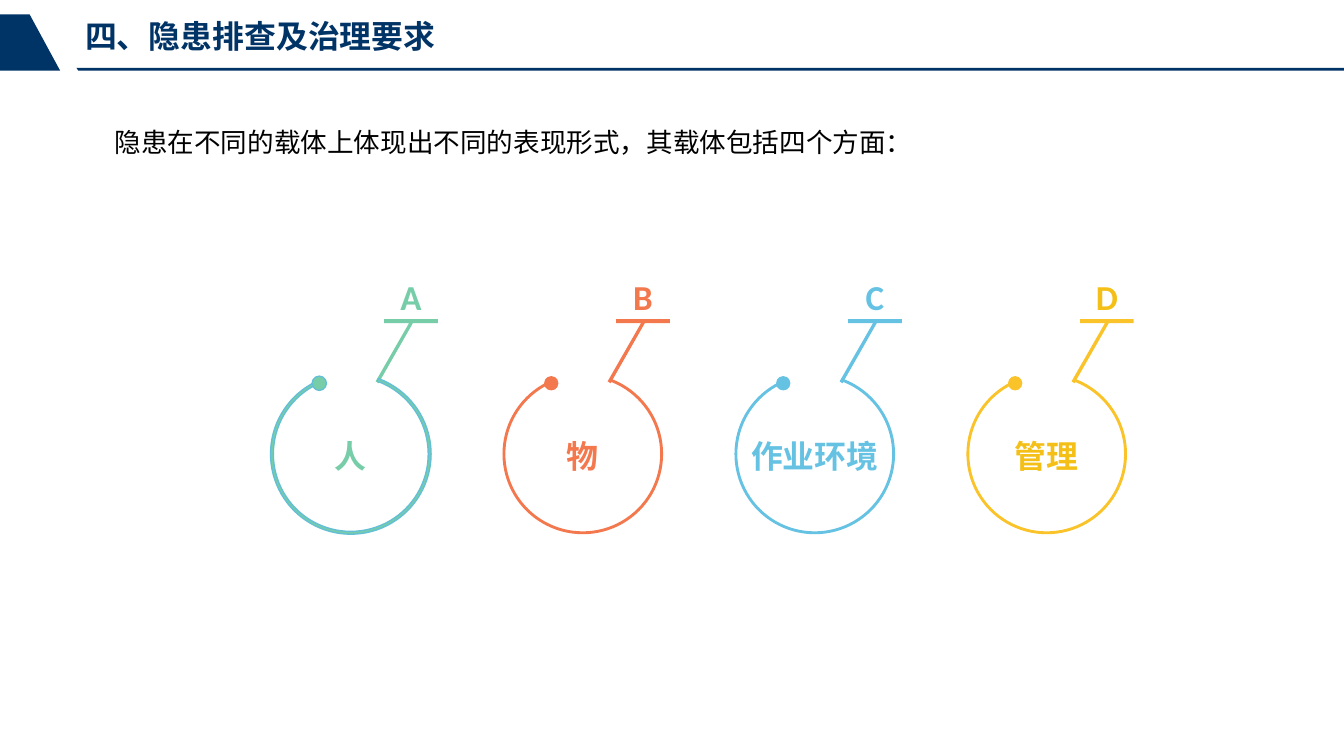
import pptx
import pptx.util
import pptx.dml.color
import pptx.enum.shapes
import pptx.enum.text
import pptx.oxml
import pptx.oxml.ns
from pptx.util import Inches

theme = {
    "navy": "003366", "black": "000000", "edge": "63BED7",
    "han": "Noto Sans CJK SC", "latin": "Arial", "mark": "Calibri",
    "head": 24, "body": 20, "name": 24, "tag": 26.4,
}
items = [
    ("A", "人", "76CDA8", "76CDA8"),
    ("B", "物", "F3784E", "F3784E"),
    ("C", "作业环境", "65C2E3", "65C2E3"),
    ("D", "管理", "F9C329", "F4C018"),
]
rgb = pptx.dml.color.RGBColor.from_string
kind = pptx.enum.shapes.MSO_SHAPE
align = pptx.enum.text.PP_ALIGN
anchor = pptx.enum.text.MSO_ANCHOR

deck = pptx.Presentation()
deck.slide_width, deck.slide_height = Inches(14.06), Inches(7.91)
slide = deck.slides.add_slide(deck.slide_layouts[6])


def paint(shape, color):
    shape.shadow.inherit = False
    shape.fill.solid()
    shape.fill.fore_color.rgb = rgb(color)
    shape.line.fill.background()


def write(area, text, face, size, color, bold=True, center=True, inset=0):
    box = slide.shapes.add_textbox(*[Inches(side) for side in area])
    frame = box.text_frame
    frame.word_wrap = True
    frame.margin_left = frame.margin_right = Inches(inset)
    frame.margin_top = frame.margin_bottom = Inches(inset / 2)
    frame.vertical_anchor = anchor.MIDDLE if center else anchor.TOP
    frame.text = text
    para = frame.paragraphs[0]
    para.alignment = align.CENTER if center else align.LEFT
    font = para.runs[0].font
    font.name, font.size, font.bold = face, pptx.util.Pt(size), bold
    font.color.rgb = rgb(color)
    east = pptx.oxml.parse_xml(
        f'<a:ea {pptx.oxml.ns.nsdecls("a")} typeface="{theme["han"]}"/>')
    para.runs[0]._r.rPr.find(pptx.oxml.ns.qn("a:latin")).addnext(east)
    return para


first, last, mid = 3.67, 10.95, 4.75
step = (last - first) / (len(items) - 1)
wide, thick, dot = 1.68, 0.03, 0.15
flag = [(0.35, 3.34), (0.91, 3.34), (0.91, 3.38), (0.65, 3.38),
        (0.29, 4.01), (0.26, 3.99), (0.61, 3.38), (0.35, 3.38)]

plates = [
    ([(0.8, 0.71), (14.06, 0.71), (14.06, 0.74), (0.82, 0.74)], theme["navy"]),
    ([(0.31, 0.15), (0.63, 0.74), (0, 0.74), (0, 0.15)], theme["navy"]),
]
for i, (tag, name, fill, ink) in enumerate(items):
    plates.append(([(first + i * step + x, y) for x, y in flag], fill))

for points, color in plates:
    ends = [(Inches(x), Inches(y)) for x, y in points]
    build = slide.shapes.build_freeform(*ends[0], scale=1.0)
    build.add_line_segments(ends[1:], close=True)
    paint(build.convert_to_shape(), color)

for i, (tag, name, fill, ink) in enumerate(items):
    left = first + i * step
    write((left + 0.35, 2.87, 0.56, 0.47), tag, theme["mark"], theme["tag"], ink)
    ring = slide.shapes.add_shape(
        kind.BLOCK_ARC, Inches(left - wide / 2), Inches(mid - wide / 2),
        Inches(wide), Inches(wide))
    for k, value in enumerate((290 * 0.6, 244 * 0.6, thick / wide)):
        ring.adjustments[k] = value
    ball = slide.shapes.add_shape(
        kind.OVAL, Inches(left - 0.33 - dot / 2), Inches(mid - 0.74 - dot / 2),
        Inches(dot), Inches(dot))
    for shape in (ring, ball):
        paint(shape, fill)
        if i == 0:
            shape.line.color.rgb = rgb(theme["edge"])
            shape.line.width = pptx.util.Pt(1)
    write((left - wide / 2, 3.94, wide, 1.65), name,
          theme["latin"], theme["name"], ink)

intro = write((1.1, 1.1, 9.43, 0.55),
              "隐患在不同的载体上体现出不同的表现形式，其载体包括四个方面：",
              theme["han"], theme["body"], theme["black"],
              bold=False, center=False, inset=0.1)
intro.line_spacing = pptx.util.Pt(36.5)

write((0.89, 0.17, 4.57, 0.4), "四、隐患排查及治理要求",
      theme["latin"], theme["head"], theme["navy"], center=False)

deck.save("out.pptx")
